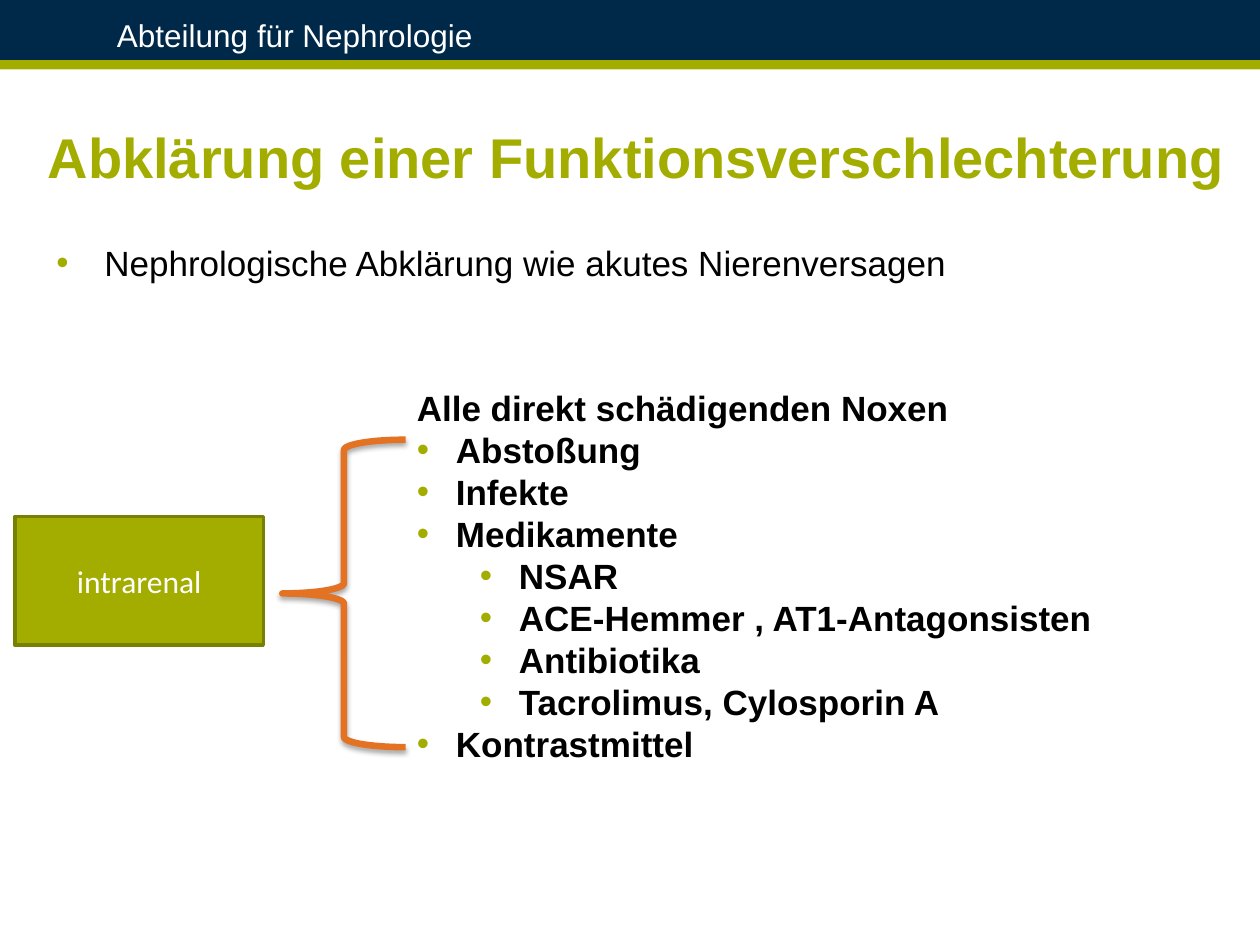
from lxml import etree
from pptx import Presentation
from pptx.dml.color import RGBColor
from pptx.enum import shapes, text
from pptx.oxml import ns
from pptx.util import Inches, Pt

NAVY, LIME, OLIVE = "002848", "A2AD00", "788000"
WHITE, BLACK, ORANGE = "FFFFFF", "000000", "E37222"
KIND = shapes.MSO_SHAPE

NOXAE = [
    ("Abstoßung", 0),
    ("Infekte", 0),
    ("Medikamente", 0),
    ("NSAR", 1),
    ("ACE-Hemmer , AT1-Antagonsisten", 1),
    ("Antibiotika", 1),
    ("Tacrolimus, Cylosporin A", 1),
    ("Kontrastmittel", 0),
]


def color(code):
    return RGBColor.from_string(code)


def node(parent, tag, **attrs):
    return etree.SubElement(parent, ns.qn("a:" + tag), attrs)


def add_shape(slide, kind, box, fill=None, line=None, width=0.75):
    shape = slide.shapes.add_shape(kind, *map(Inches, box))
    shape.shadow.inherit = False
    if fill:
        shape.fill.solid()
        shape.fill.fore_color.rgb = color(fill)
    else:
        shape.fill.background()
    if line:
        shape.line.color.rgb = color(line)
        shape.line.width = Pt(width)
    else:
        shape.line.fill.background()
    return shape


def add_rule(slide, y):
    rule = slide.shapes.add_connector(
        shapes.MSO_CONNECTOR.STRAIGHT, 0, Inches(y), Inches(10), Inches(y))
    rule.line.color.rgb = color(LIME)
    rule.line.width = Pt(6)
    node(rule._element.spPr, "effectLst")


def add_run(para, words, size, code, bold=False, face="Arial"):
    run = para.add_run()
    run.text = words
    run.font.name = face
    run.font.size = Pt(size)
    run.font.bold = bold
    run.font.color.rgb = color(code)


def add_box(slide, box, wrap=True):
    frame = slide.shapes.add_textbox(*map(Inches, box)).text_frame
    frame.word_wrap = wrap
    return frame


def set_bullet(para, left, hang):
    props = para._p.get_or_add_pPr()
    props.set("marL", str(Inches(left)))
    props.set("indent", str(-Inches(hang)))
    node(node(props, "buClr"), "srgbClr", val=LIME)
    node(props, "buFont", typeface="Arial")
    node(props, "buChar", char="•")


def add_list(slide):
    frame = add_box(slide, (3.21, 3.02, 5.61, 3.8), wrap=False)
    add_run(frame.paragraphs[0], "Alle direkt schädigenden Noxen", 20, BLACK, True)
    for words, level in NOXAE:
        para = frame.add_paragraph()
        para.level = level
        set_bullet(para, 0.31 + 0.5 * level, 0.31)
        add_run(para, words, 20, BLACK, True)


def add_brace(slide):
    brace = add_shape(slide, KIND.LEFT_BRACE, (2.24, 3.49, 0.98, 2.44),
                      line=ORANGE, width=3.75)
    effects = brace._element.spPr.find(ns.qn("a:effectLst"))
    shade = node(effects, "outerShdw", blurRad=str(Pt(3.1)), dist=str(Pt(1.8)),
                 dir="5400000", rotWithShape="0")
    node(node(shade, "srgbClr", val=BLACK), "alpha", val="35000")


def main():
    deck = Presentation()
    deck.slide_width, deck.slide_height = Inches(10), Inches(7.5)
    slide = deck.slides.add_slide(deck.slide_layouts[6])

    add_shape(slide, KIND.RECTANGLE, (0, 0, 10, 7.5), NAVY, NAVY)
    add_rule(slide, 0.52)
    add_shape(slide, KIND.RECTANGLE, (0, 0.55, 10, 6.95), WHITE)

    head = add_box(slide, (0.83, 0.08, 6.59, 0.25))
    add_run(head.paragraphs[0], "Abteilung für Nephrologie", 18, WHITE)

    body = add_box(slide, (0.35, 1.87, 9.5, 0.42))
    set_bullet(body.paragraphs[0], 0.38, 0.38)
    add_run(body.paragraphs[0],
            "Nephrologische Abklärung wie akutes Nierenversagen", 20, BLACK)

    title = add_box(slide, (0.28, 0.92, 9.61, 0.64), wrap=False)
    add_run(title.paragraphs[0],
            "Abklärung einer Funktionsverschlechterung", 32, LIME, True)

    cause = add_shape(slide, KIND.RECTANGLE, (0.12, 4.1, 1.97, 1.02), LIME, OLIVE, 2)
    cause.text_frame.vertical_anchor = text.MSO_ANCHOR.MIDDLE
    para = cause.text_frame.paragraphs[0]
    para.alignment = text.PP_ALIGN.CENTER
    add_run(para, "intrarenal", 18, WHITE, face="Calibri")

    add_list(slide)
    add_brace(slide)
    deck.save("out.pptx")


if __name__ == "__main__":
    main()
